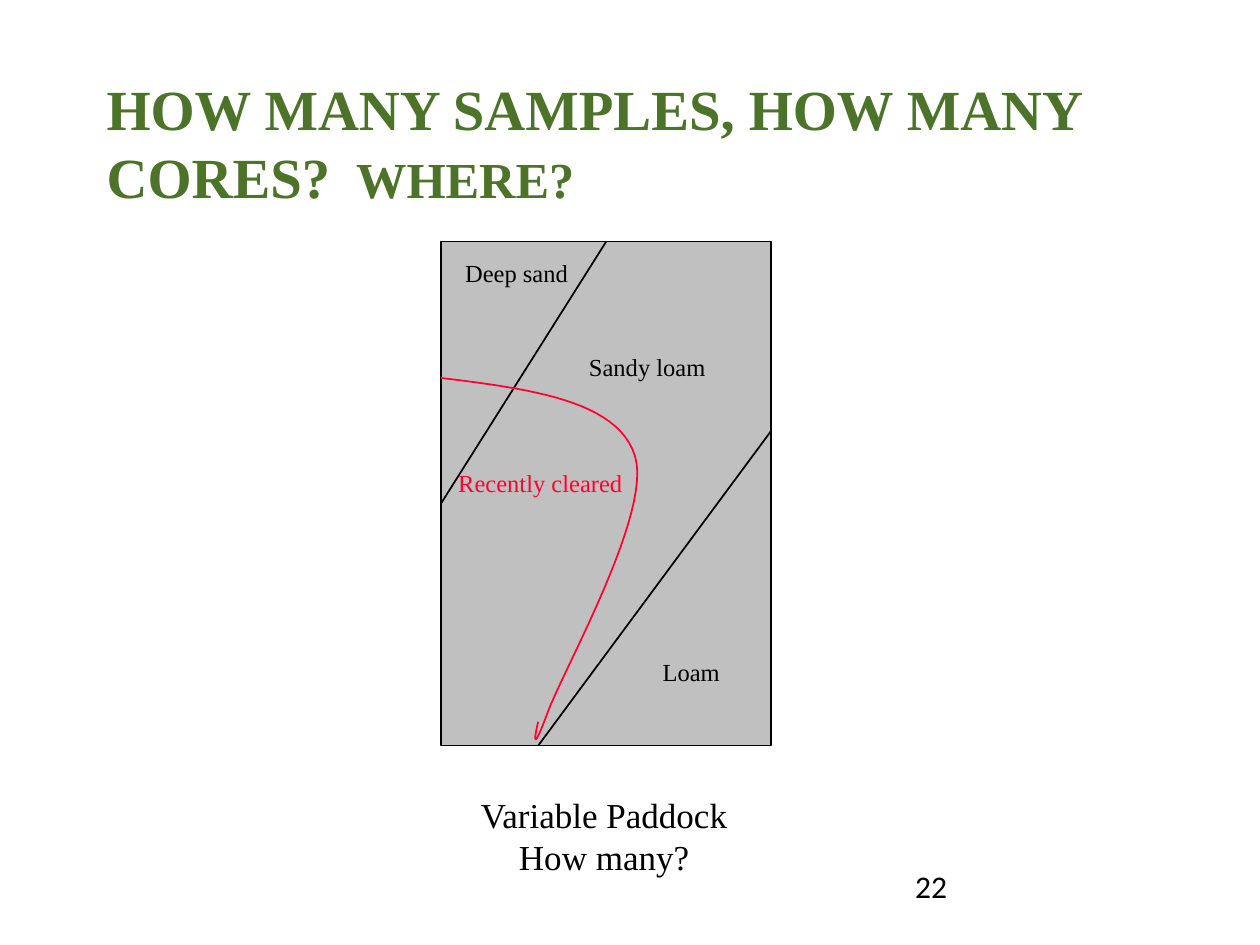
from lxml import etree
from pptx import Presentation
from pptx.dml.color import RGBColor
from pptx.enum import shapes, text
from pptx.oxml.ns import qn
from pptx.util import Cm, Pt

SERIF = "Times New Roman"
BLACK, RED, GREEN, GREY = "000000", "FF0033", "4C7329", "C0C0C0"


def colour(hex_code):
    return RGBColor.from_string(hex_code)


def style_font(font, size, hex_code, name=SERIF, bold=False):
    font.name, font.size, font.bold = name, Pt(size), bold
    font.color.rgb = colour(hex_code)


def style_line(line, hex_code):
    line.color.rgb = colour(hex_code)
    line.width = Pt(1)


def add_text(page, box, lines, size, hex_code=BLACK, name=SERIF,
             align=text.PP_ALIGN.CENTER):
    frame = page.shapes.add_textbox(*map(Cm, box)).text_frame
    frame.word_wrap = True
    for index, line in enumerate(lines):
        para = frame.add_paragraph() if index else frame.paragraphs[0]
        para.text = line
        para.alignment = align
        style_font(para.font, size, hex_code, name)
    return frame


def add_label(page, box, label, hex_code):
    """Add a one-line label that grows with its text and never wraps."""
    frame = add_text(page, box, [label], 14, hex_code)
    frame.margin_left = frame.margin_right = 0
    frame.word_wrap = False
    frame.auto_size = text.MSO_AUTO_SIZE.SHAPE_TO_FIT_TEXT


def add_title(page, box):
    frame = page.shapes.add_textbox(*map(Cm, box)).text_frame
    frame.word_wrap = True
    frame.vertical_anchor = text.MSO_ANCHOR.MIDDLE
    para = frame.paragraphs[0]
    for words, size in (("HOW MANY SAMPLES, HOW MANY CORES? ", 32.4),
                        (" WHERE?", 28.8)):
        span = para.add_run()
        span.text = words
        style_font(span.font, size, GREEN, bold=True)


def add_boundary(page, start, end):
    line = page.shapes.add_connector(
        shapes.MSO_CONNECTOR.STRAIGHT, *map(Cm, start + end))
    style_line(line.line, BLACK)
    etree.SubElement(line._element.spPr, qn("a:effectLst"))


def bezier_points(knots, steps=24):
    """Sample a chain of cubic curves: a start, then three knots per curve."""
    points = [knots[0]]
    for first in range(0, len(knots) - 1, 3):
        a, b, c, d = knots[first:first + 4]
        for step in range(1, steps + 1):
            t = step / steps
            s = 1 - t
            points.append(tuple(
                s**3 * a[i] + 3 * s * s * t * b[i] + 3 * s * t * t * c[i] + t**3 * d[i]
                for i in (0, 1)))
    return points


def add_curve(page, knots):
    points = [(Cm(x), Cm(y)) for x, y in bezier_points(knots)]
    builder = page.shapes.build_freeform(*points[0])
    builder.add_line_segments(points[1:], close=False)
    curve = builder.convert_to_shape()
    curve.shadow.inherit = False
    curve.fill.background()
    style_line(curve.line, RED)


def add_paddock(page, box):
    left, top, width, height = box

    def place(x, y):
        return left + x, top + y

    field = page.shapes.add_shape(shapes.MSO_SHAPE.RECTANGLE, *map(Cm, box))
    field.shadow.inherit = False
    field.fill.solid()
    field.fill.fore_color.rgb = colour(GREY)
    style_line(field.line, BLACK)

    add_boundary(page, place(width / 2, 0), place(0, 5.28))
    add_boundary(page, place(width, 3.81), place(1.96, height))
    cleared_edge = [(0, 2.75),
                    (1.78, 2.97), (3.56, 3.2), (3.91, 4.32),
                    (4.27, 5.44), (2.49, 8.59), (2.16, 9.47),
                    (1.83, 10.36), (1.88, 10.01), (1.96, 9.68)]
    add_curve(page, [place(*knot) for knot in cleared_edge])

    for label, x, y, label_width, hex_code in (
            ("Deep sand", 0.23, 0.21, 2.59, BLACK),
            ("Sandy loam", 2.74, 2.1, 2.84, BLACK),
            ("Loam", 4.22, 8.25, 1.65, BLACK),
            ("Recently cleared", 0.1, 4.44, 3.81, RED)):
        add_label(page, (*place(x, y), label_width, 0.84), label, hex_code)


def main():
    deck = Presentation()
    deck.slide_width, deck.slide_height = Cm(25.4), Cm(19.05)
    page = deck.slides.add_slide(deck.slide_layouts[6])
    add_title(page, (1.9, 1.27, 21.6, 3.18))
    add_paddock(page, (8.89, 4.87, 6.66, 10.16))
    add_text(page, (6.78, 15.88, 10.8, 1.96),
             ["Variable Paddock", "How many?"], 20)
    add_text(page, (18.2, 17.35, 5.92, 1.32), ["22"], 18, name="Calibri",
             align=text.PP_ALIGN.LEFT)
    deck.save("out.pptx")


if __name__ == "__main__":
    main()
